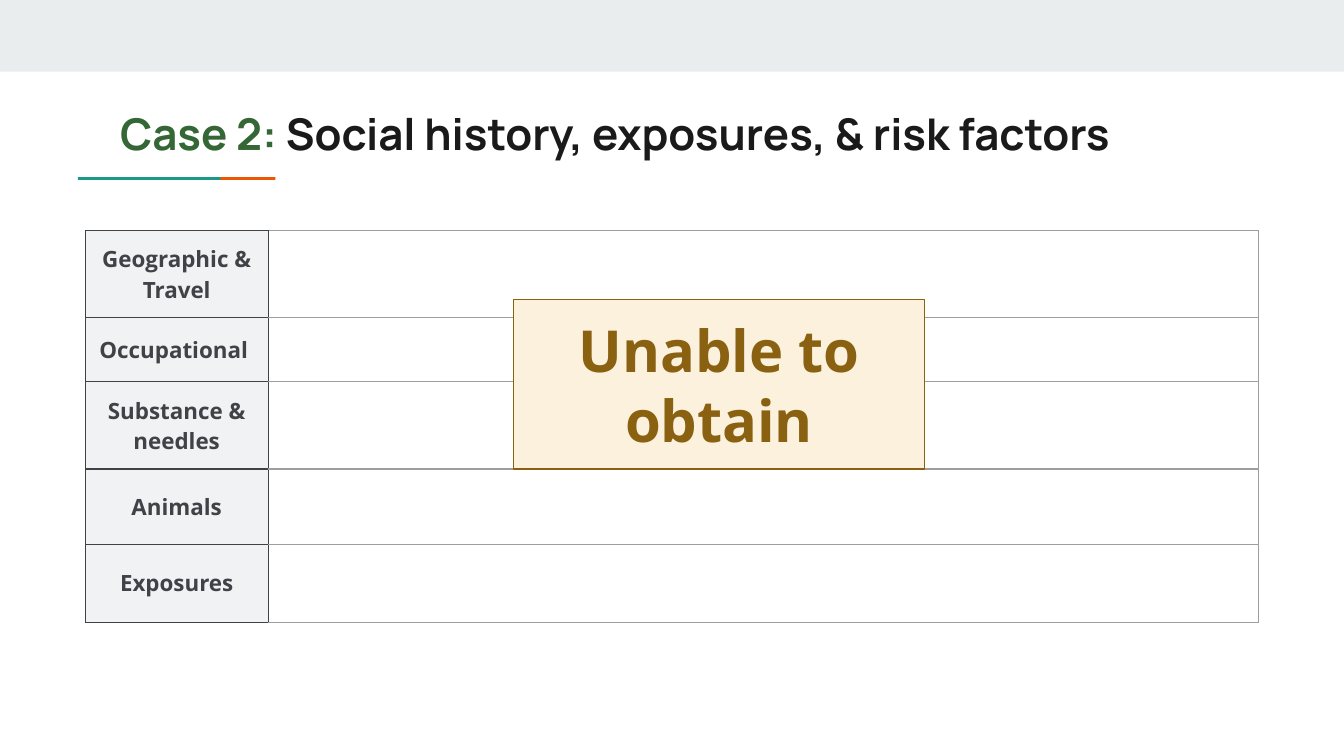
"""Build the social history slide of case 2."""
from dataclasses import dataclass

from lxml import etree
from pptx import Presentation
from pptx.dml.color import RGBColor
from pptx.enum import shapes, text
from pptx.oxml import ns
from pptx.util import Inches, Pt

COLS, ROWS = 100, 56.25
CELL = Inches(0.1)
MIST = RGBColor(0xE9, 0xED, 0xEE)
TEAL = RGBColor(0x1A, 0x99, 0x88)
ORANGE = RGBColor(0xEB, 0x56, 0x00)
GREEN = RGBColor(0x35, 0x66, 0x35)
BLACK = RGBColor(0x1A, 0x1A, 0x1A)
SLATE = RGBColor(0x40, 0x42, 0x47)
PALE = RGBColor(0xF1, 0xF2, 0xF3)
GREY = RGBColor(0x9E, 0x9E, 0x9E)
CREAM = RGBColor(0xFB, 0xF1, 0xDD)
BROWN = RGBColor(0x89, 0x61, 0x10)


@dataclass(frozen=True)
class Box:
    """A place on the grid, in columns and rows."""
    col: float
    row: float
    wide: float
    high: float

    def place(self) -> tuple[int, ...]:
        """Return left, top, width and height as lengths."""
        return tuple(span(n) for n in (self.col, self.row, self.wide, self.high))


@dataclass(frozen=True)
class Bar:
    """A filled rectangle."""
    box: Box
    fill: RGBColor


@dataclass(frozen=True)
class Topic:
    """A table row with its label and height in grid rows."""
    label: str
    high: float


BARS = (
    Bar(Box(0, 0, COLS, 5.33), MIST),
    Bar(Box(9.9, 13.18, 10.6, 0.2), ORANGE),
    Bar(Box(5.8, 13.18, 10.6, 0.2), TEAL),
)
TOPICS = (
    Topic("Geographic & Travel", 6.5),
    Topic("Occupational ", 4.75),
    Topic("Substance & needles", 6.5),
    Topic("Animals", 5.6),
    Topic("Exposures", 5.8),
)
WIDTHS = (13.6, 73.7)
TITLE = (("Case 2:", GREEN), (" Social history, exposures, & risk factors", BLACK))


def span(count: float) -> int:
    """Turn a number of grid cells into a length."""
    return round(count * CELL)


def style(run, face: str, size: float, color: RGBColor) -> None:
    """Give a run its bold font."""
    font = run.font
    font.name, font.size, font.bold = face, Pt(size), True
    font.color.rgb = color


def pad(frame) -> None:
    """Set equal margins on a text frame or a cell."""
    frame.margin_left = frame.margin_right = span(1)
    frame.margin_top = frame.margin_bottom = span(1)


def center(frame, size: float, color: RGBColor) -> None:
    """Center the first paragraph and format its run."""
    para = frame.paragraphs[0]
    para.alignment = text.PP_ALIGN.CENTER
    style(para.runs[0], "Open Sans", size, color)


def draw_bar(slide, bar: Bar):
    """Draw a filled rectangle without a line."""
    shape = slide.shapes.add_shape(shapes.MSO_SHAPE.RECTANGLE, *bar.box.place())
    shape.shadow.inherit = False
    shape.fill.solid()
    shape.fill.fore_color.rgb = bar.fill
    shape.line.fill.background()
    return shape


def draw_title(slide, box: Box) -> None:
    """Write the two-coloured title."""
    frame = slide.shapes.add_textbox(*box.place()).text_frame
    frame.word_wrap = True
    pad(frame)
    for words, color in TITLE:
        run = frame.paragraphs[0].add_run()
        run.text = words
        style(run, "Manrope", 23.4, color)


def edge(cell, sides: str, color: RGBColor) -> None:
    """Draw cell borders on the given sides, in the order L, R, T, B."""
    props = cell._tc.get_or_add_tcPr()
    for spot, side in enumerate(sides):
        line = etree.Element(ns.qn(f"a:ln{side}"), w=str(Pt(0.75)))
        fill = etree.SubElement(line, ns.qn("a:solidFill"))
        etree.SubElement(fill, ns.qn("a:srgbClr"), val=str(color))
        props.insert(spot, line)


def draw_table(slide, col: float, row: float) -> None:
    """Draw the table of topics with empty answers."""
    box = Box(col, row, sum(WIDTHS), sum(t.high for t in TOPICS))
    table = slide.shapes.add_table(len(TOPICS), len(WIDTHS), *box.place()).table
    table.first_row = table.horz_banding = False
    for column, wide in zip(table.columns, WIDTHS):
        column.width = span(wide)
    for line, topic in zip(table.rows, TOPICS):
        line.height = span(topic.high)
        label, blank = line.cells
        label.text_frame.text = topic.label
        label.fill.solid()
        label.fill.fore_color.rgb = PALE
        label.vertical_anchor = text.MSO_ANCHOR.MIDDLE
        pad(label)
        center(label.text_frame, 12, SLATE)
        edge(label, "LRTB", SLATE)
        blank.fill.background()
        edge(blank, "RTB", GREY)
        edge(blank, "L", SLATE)


def draw_note(slide, box: Box) -> None:
    """Draw the framed note over the table."""
    note = draw_bar(slide, Bar(box, CREAM))
    note.line.color.rgb = BROWN
    note.line.width = Pt(0.75)
    frame = note.text_frame
    frame.word_wrap = True
    frame.vertical_anchor = text.MSO_ANCHOR.MIDDLE
    pad(frame)
    frame.text = "Unable to obtain"
    center(frame, 31, BROWN)


def main() -> None:
    """Build and save the slide."""
    deck = Presentation()
    deck.slide_width, deck.slide_height = span(COLS), span(ROWS)
    slide = deck.slides.add_slide(deck.slide_layouts[6])
    for bar in BARS:
        draw_bar(slide, bar)
    draw_title(slide, Box(7.95, 6.95, 84.1, 5.9))
    draw_table(slide, 6.35, 17.15)
    draw_note(slide, Box(38.2, 22.3, 30.6, 12.6))
    deck.save("out.pptx")


if __name__ == "__main__":
    main()
